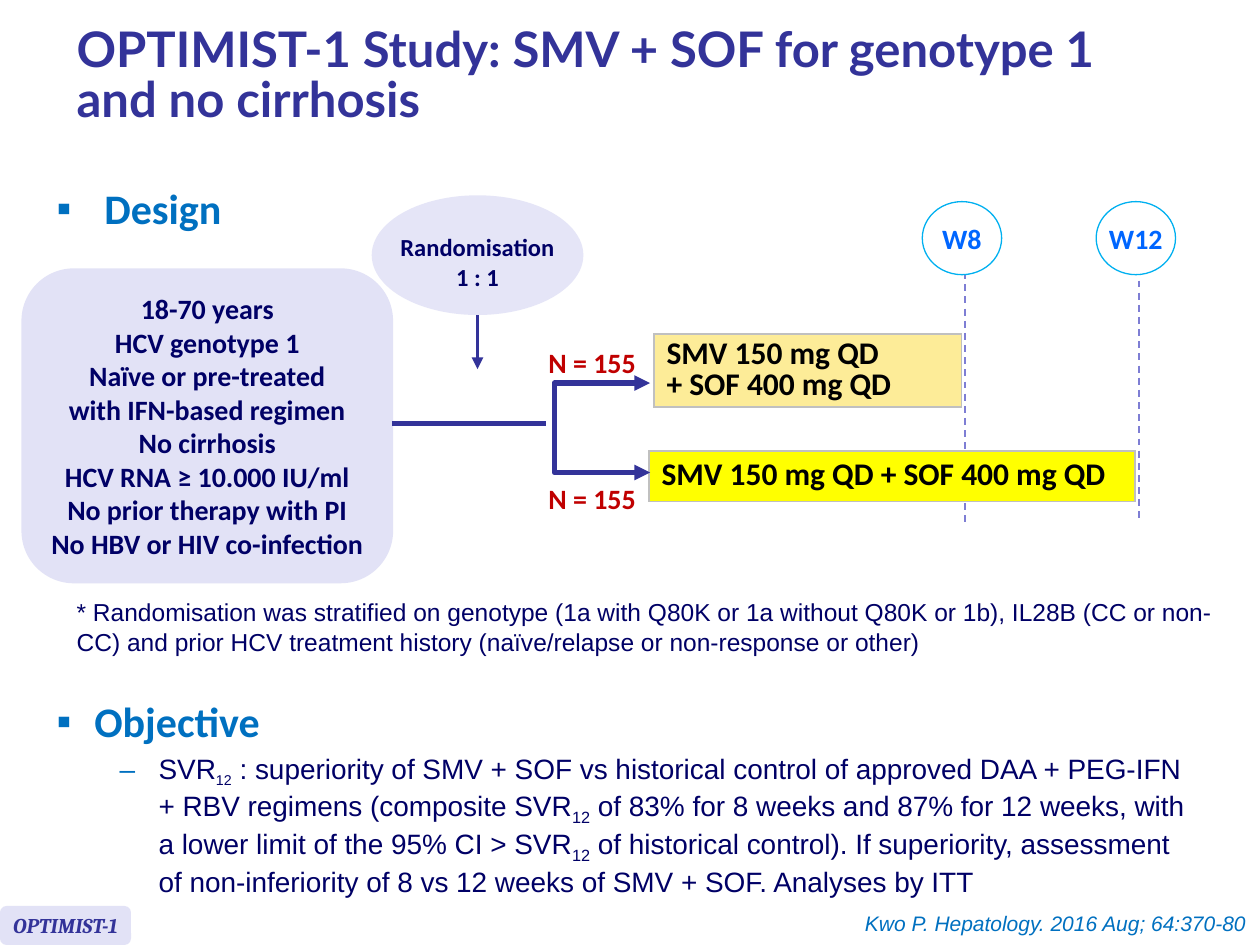
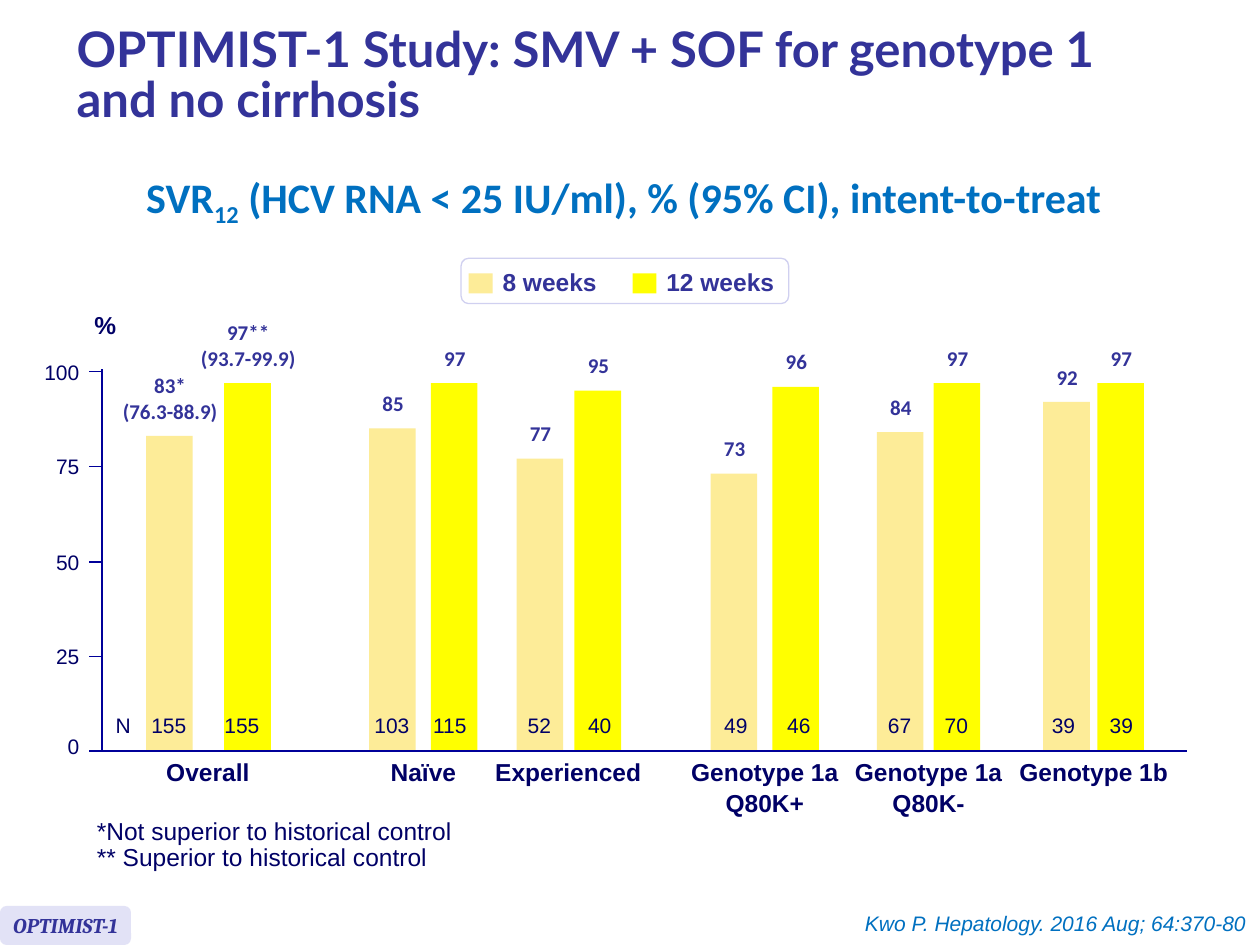
from pptx import Presentation
from pptx.dml.color import RGBColor
from pptx.enum.dml import MSO_LINE
from pptx.enum.shapes import MSO_CONNECTOR, MSO_SHAPE
from pptx.enum.text import MSO_ANCHOR as ANCHOR, PP_ALIGN as ALIGN
from pptx.oxml.ns import qn
from pptx.util import Pt
from lxml.etree import SubElement

PX = 9144  # 100 px to the inch

INDIGO = RGBColor(0x33, 0x33, 0x99)
NAVY = RGBColor(0x00, 0x00, 0x66)
AXIS_BLUE = RGBColor(0x00, 0x00, 0x99)
HEADING_BLUE = RGBColor(0x00, 0x70, 0xC0)
WEEK_BLUE = RGBColor(0x00, 0x66, 0xFF)
WEEK_RING = RGBColor(0x00, 0xB0, 0xF0)
DASH_VIOLET = RGBColor(0x7E, 0x7E, 0xD4)
LAVENDER = RGBColor(0xE2, 0xE2, 0xF6)
PALE_LAVENDER = RGBColor(0xE5, 0xE5, 0xF7)
LEGEND_BORDER = RGBColor(0xD0, 0xD0, 0xF0)
GREY = RGBColor(0xC0, 0xC0, 0xC0)
RED = RGBColor(0xC0, 0x00, 0x00)
CREAM = RGBColor(0xFD, 0xEC, 0x98)
YELLOW = RGBColor(0xFF, 0xFF, 0x00)
BLACK = RGBColor(0x00, 0x00, 0x00)
WHITE = RGBColor(0xFF, 0xFF, 0xFF)

TITLE = "OPTIMIST-1 Study: SMV + SOF for genotype 1\nand no cirrhosis"
SERIES = (("8 weeks", CREAM), ("12 weeks", YELLOW))
# Per category: label lines, then per series: bar left, rate, N, centre of N, label lines
CATEGORIES = (
    (["Overall"], (35, 83, 155, 53, ["83*", "(76.3-88.9)"]),
     (97, 97, 155, 111, ["97**", "(93.7-99.9)"])),
    (["Naïve"], (212, 85, 103, 230, ["85"]), (261, 97, 115, 276, ["97"])),
    (["Experienced"], (329, 77, 52, 347, ["77"]), (375, 95, 40, 395, ["95"])),
    (["Genotype 1a", "Q80K+"], (483, 73, 49, 503, ["73"]), (532, 96, 46, 553, ["96"])),
    (["Genotype 1a", "Q80K-"], (615, 84, 67, 633, ["84"]), (660, 97, 70, 678, ["97"])),
    (["Genotype 1b"], (747, 92, 39, 763, ["92"]), (790, 97, 39, 809, ["97"])),
)


def write(frame, paragraphs, size=14, font="Arial", color=NAVY, bold=False, italic=False,
          align=ALIGN.LEFT, anchor=ANCHOR.TOP, wrap=False, spacing=None, before=0,
          margins=(10, 5)):
    """Fill a text frame; underscores enclose subscripts, newlines break lines."""
    frame.word_wrap = wrap
    frame.vertical_anchor = anchor
    frame.margin_left = frame.margin_right = margins[0] * PX
    frame.margin_top = frame.margin_bottom = margins[1] * PX
    for index, text in enumerate(paragraphs):
        paragraph = frame.add_paragraph() if index else frame.paragraphs[0]
        paragraph.alignment = align
        if spacing:
            paragraph.line_spacing = spacing
        if index and before:
            paragraph.space_before = Pt(before)
        for number, line in enumerate(text.split("\n")):
            if number:
                paragraph.add_line_break()
            for position, piece in enumerate(line.split("_")):
                add_run(paragraph, piece, size, font, color, bold, italic, position % 2)
    return frame


def add_run(paragraph, text, size, font, color, bold, italic, subscript):
    run = paragraph.add_run()
    run.text = text
    run.font.size, run.font.name = Pt(size), font
    run.font.bold, run.font.italic = bold, italic
    run.font.color.rgb = color
    if subscript:
        run.font._rPr.set("baseline", "-25000")


def add_text(slide, left, top, width, height, paragraphs, **text_format):
    box = slide.shapes.add_textbox(left * PX, top * PX, width * PX, height * PX)
    return write(box.text_frame, paragraphs, **text_format)


def add_shape(slide, kind, left, top, width, height, fill, line=None, paragraphs=(),
              **text_format):
    shape = slide.shapes.add_shape(kind, left * PX, top * PX, width * PX, height * PX)
    shape.shadow.inherit = False
    shape.fill.solid()
    shape.fill.fore_color.rgb = fill
    if line:
        shape.line.color.rgb = line
        shape.line.width = Pt(0.75)
    else:
        shape.line.fill.background()
    if paragraphs:
        write(shape.text_frame, paragraphs, align=ALIGN.CENTER,
              **{"anchor": ANCHOR.MIDDLE, **text_format})


def style_line(line, color, width, arrows=()):
    line.color.rgb = color
    line.width = Pt(width)
    for end in arrows:
        SubElement(line._get_or_add_ln(), qn(f"a:{end}"), type="triangle")


def add_line(slide, x1, y1, x2, y2, color, width, dashed=False, arrows=()):
    connector = slide.shapes.add_connector(
        MSO_CONNECTOR.STRAIGHT, x1 * PX, y1 * PX, x2 * PX, y2 * PX)
    if dashed:
        connector.line.dash_style = MSO_LINE.DASH
    style_line(connector.line, color, width, arrows)
    SubElement(connector._element.spPr, qn("a:effectLst"))


def add_bullet(paragraph, char, indent, hanging, level=0):
    paragraph.level = level
    properties = paragraph._p.get_or_add_pPr()
    properties.set("marL", str(indent * PX))
    properties.set("indent", str(-hanging * PX))
    color = SubElement(properties, qn("a:buClr"))
    SubElement(color, qn("a:srgbClr"), val=str(HEADING_BLUE))
    SubElement(properties, qn("a:buFont"), typeface="Arial")
    SubElement(properties, qn("a:buChar"), char=char)


def add_frame(slide):
    """Title, study tag and citation common to both slides."""
    add_text(slide, 51, 8, 949, 107, [TITLE], size=28, font="Lato", color=INDIGO,
             bold=True, anchor=ANCHOR.MIDDLE, wrap=True, spacing=0.85)
    add_shape(slide, MSO_SHAPE.ROUNDED_RECTANGLE, 0, 719, 104, 31, LAVENDER,
              paragraphs=["OPTIMIST-1"], size=12, font="Cambria", color=INDIGO,
              bold=True, italic=True)
    add_text(slide, 674, 718, 325, 30, ["Kwo P. Hepatology. 2016 Aug; 64:370-80"],
             size=12, color=HEADING_BLUE, italic=True, align=ALIGN.RIGHT)


def add_treatment(slide, left, top, width, height, text, fill):
    table = slide.shapes.add_table(1, 1, left * PX, top * PX, width * PX, height * PX).table
    table.first_row = table.horz_banding = False
    cell = table.cell(0, 0)
    properties = cell._tc.get_or_add_tcPr()
    for side in ("lnL", "lnR", "lnT", "lnB"):
        border = SubElement(properties, qn(f"a:{side}"), w=str(Pt(1)))
        SubElement(SubElement(border, qn("a:solidFill")), qn("a:srgbClr"), val=str(GREY))
    cell.fill.solid()
    cell.fill.fore_color.rgb = fill
    write(cell.text_frame, [text], size=18, font="Calibri", color=BLACK, bold=True,
          wrap=True, spacing=0.8)
    cell.vertical_anchor = ANCHOR.MIDDLE


def add_week(slide, left, top, label, line_top, line_bottom):
    """Week marker in a circle with its dashed time line."""
    add_line(slide, left + 34, line_top, left + 34, line_bottom, DASH_VIOLET, 1, dashed=True)
    add_shape(slide, MSO_SHAPE.OVAL, left, top, 63, 58, WHITE, WEEK_RING, [label],
              size=16, font="Calibri", color=WEEK_BLUE, bold=True)


def add_design(slide, left, top):
    """Study flow; the week lines come first so that they pass behind the arms."""
    add_week(slide, left + 715, top + 5, "W8", top + 61, top + 259)
    add_week(slide, left + 853, top + 5, "W12", top + 58, top + 257)
    add_treatment(slide, left + 502, top + 110, 244, 58,
                  "SMV 150 mg QD\n+ SOF 400 mg QD", CREAM)
    add_treatment(slide, left + 498, top + 203, 386, 40,
                  "SMV 150 mg QD + SOF 400 mg QD", YELLOW)
    add_line(slide, left + 362, top + 94, left + 362, top + 138, INDIGO, 2.25,
             arrows=["tailEnd"])
    add_shape(slide, MSO_SHAPE.OVAL, left + 278, top, 168, 95, PALE_LAVENDER,
              paragraphs=["Randomisation", "1 : 1"], size=14, font="Calibri", bold=True,
              anchor=ANCHOR.BOTTOM)
    add_shape(slide, MSO_SHAPE.ROUNDED_RECTANGLE, left, top + 58, 295, 250, LAVENDER,
              paragraphs=["18-70 years", "HCV genotype 1", "Naïve or pre-treated",
                          "with IFN-based regimen", "No cirrhosis",
                          "HCV RNA ≥ 10.000 IU/ml", "No prior therapy with PI",
                          "No HBV or HIV co-infection"],
              size=16, font="Calibri", bold=True)
    for label_top in (top + 114, top + 222):
        add_text(slide, left + 408, label_top, 90, 37, ["N = 155"], size=16,
                 font="Calibri", color=RED, bold=True, align=ALIGN.CENTER)
    add_line(slide, left + 294, top + 181, left + 416, top + 181, INDIGO, 3)
    add_fork(slide, left + 423, top + 149, 76, 71)


def add_fork(slide, left, top, width, height):
    """Bracket with an arrow towards each treatment arm."""
    right, bottom = left + width, top + height
    builder = slide.shapes.build_freeform(right, top, scale=PX)
    builder.add_line_segments([(left, top), (left, bottom), (right, bottom)], close=False)
    fork = builder.convert_to_shape()
    fork.shadow.inherit = False
    fork.fill.background()
    style_line(fork.line, INDIGO, 3, ["headEnd", "tailEnd"])


def add_objective(slide, left, top, width, height):
    heading = dict(size=24, font="Calibri", color=HEADING_BLUE, bold=True)
    frame = add_text(slide, left, top, width, height, ["Objective"], wrap=True, **heading)
    add_bullet(frame.paragraphs[0], "▪", 30, 30)
    goal = frame.add_paragraph()
    goal.space_before = Pt(3.2)
    add_bullet(goal, "–", 81, 31, level=1)
    text = ("SVR_12_ : superiority of SMV + SOF vs historical control of approved DAA + "
            "PEG-IFN + RBV regimens (composite SVR_12_ of 83% for 8 weeks and 87% for 12 "
            "weeks, with a lower limit of the 95% CI > SVR_12_ of historical control). If "
            "superiority, assessment of non-inferiority of 8 vs 12 weeks of SMV + SOF. "
            "Analyses by ITT")
    for position, piece in enumerate(text.split("_")):
        add_run(goal, piece, 14 if position == 1 else 16, "Arial", NAVY, False, False,
                position % 2)


def add_legend(slide, left, top):
    add_shape(slide, MSO_SHAPE.ROUNDED_RECTANGLE, left, top, 260, 36, WHITE, LEGEND_BORDER)
    for index, (name, color) in enumerate(SERIES):
        x = left + 6 + 130 * index
        add_shape(slide, MSO_SHAPE.RECTANGLE, x, top + 12, 19, 16, color)
        add_text(slide, x + 17, top + 2, 106, 34, [name], color=INDIGO, bold=True)


def add_bar(slide, left, base, unit, width, bar, color):
    """Bar with its rate above and its N inside."""
    offset, rate, count, count_center, label = bar
    x, height = left + offset, round(rate * unit)
    label_height = 20 + 20 * len(label)
    add_shape(slide, MSO_SHAPE.RECTANGLE, x, base - height, width, height, color)
    add_text(slide, x + width // 2 - 47, base - height - label_height, 96, label_height,
             label, size=12, font="Calibri", color=INDIGO, bold=True, align=ALIGN.CENTER,
             margins=(10, 10))
    add_text(slide, left + count_center - 24, base - 35, 48, 30, [str(count)], size=12,
             align=ALIGN.CENTER)


def add_bar_chart(slide, left, top, width, height):
    """Plot whose box runs from the 100 % mark down to the baseline."""
    base, unit, bar_width = top + height, height / 100, 37
    add_text(slide, left - 16, top - 54, 38, 34, ["%"], bold=True)
    for category, *bars in CATEGORIES:
        for bar, (_, color) in zip(bars, SERIES):
            add_bar(slide, left, base, unit, bar_width, bar, color)
        center = left + (bars[0][0] + bars[1][0] + bar_width) // 2
        add_text(slide, center - 69, base, 138, 10 + 24 * len(category), category,
                 bold=True, align=ALIGN.CENTER, before=0.7)
    add_text(slide, left + 1, base - 35, 32, 30, ["N"], size=12)
    add_line(slide, left, top - 2, left, base, AXIS_BLUE, 0.75)
    add_line(slide, left - 10, base, left + width, base, AXIS_BLUE, 0.75)
    for tick in range(0, 101, 25):
        y = base - round(tick * unit)
        if tick:
            add_line(slide, left - 10, y, left, y, AXIS_BLUE, 0.75)
        add_text(slide, left - 46, min(y, base - 4) - 10, 28, 20, [str(tick)], size=12,
                 align=ALIGN.RIGHT, anchor=ANCHOR.MIDDLE, margins=(0, 0))


def build_design_slide(slide):
    add_frame(slide)
    design = add_text(slide, 35, 140, 198, 63, ["Design"], size=24, font="Calibri",
                      color=HEADING_BLUE, bold=True, wrap=True)
    add_bullet(design.paragraphs[0], "▪", 38, 38)
    add_design(slide, 17, 155)
    add_text(slide, 51, 469, 929, 57,
             ["* Randomisation was stratified on genotype (1a with Q80K or 1a without Q80K "
              "or 1b), IL28B (CC or non-CC) and prior HCV treatment history (naïve/relapse "
              "or non-response or other)"], wrap=True)
    add_objective(slide, 35, 547, 921, 159)


def build_results_slide(slide):
    add_frame(slide)
    add_text(slide, 99, 131, 792, 50,
             ["SVR_12_ (HCV RNA < 25 IU/ml), % (95% CI), intent-to-treat"], size=24,
             font="Calibri", color=HEADING_BLUE, bold=True, align=ALIGN.CENTER)
    add_legend(slide, 366, 205)
    add_bar_chart(slide, 81, 295, 861, 301)
    add_text(slide, 67, 645, 303, 53, ["*Not superior to historical control",
                                       "** Superior to historical control"], spacing=0.9)


def main():
    presentation = Presentation()
    presentation.slide_width, presentation.slide_height = 1000 * PX, 750 * PX
    for build in (build_design_slide, build_results_slide):
        build(presentation.slides.add_slide(presentation.slide_layouts[6]))
    presentation.save("out.pptx")


if __name__ == "__main__":
    main()
